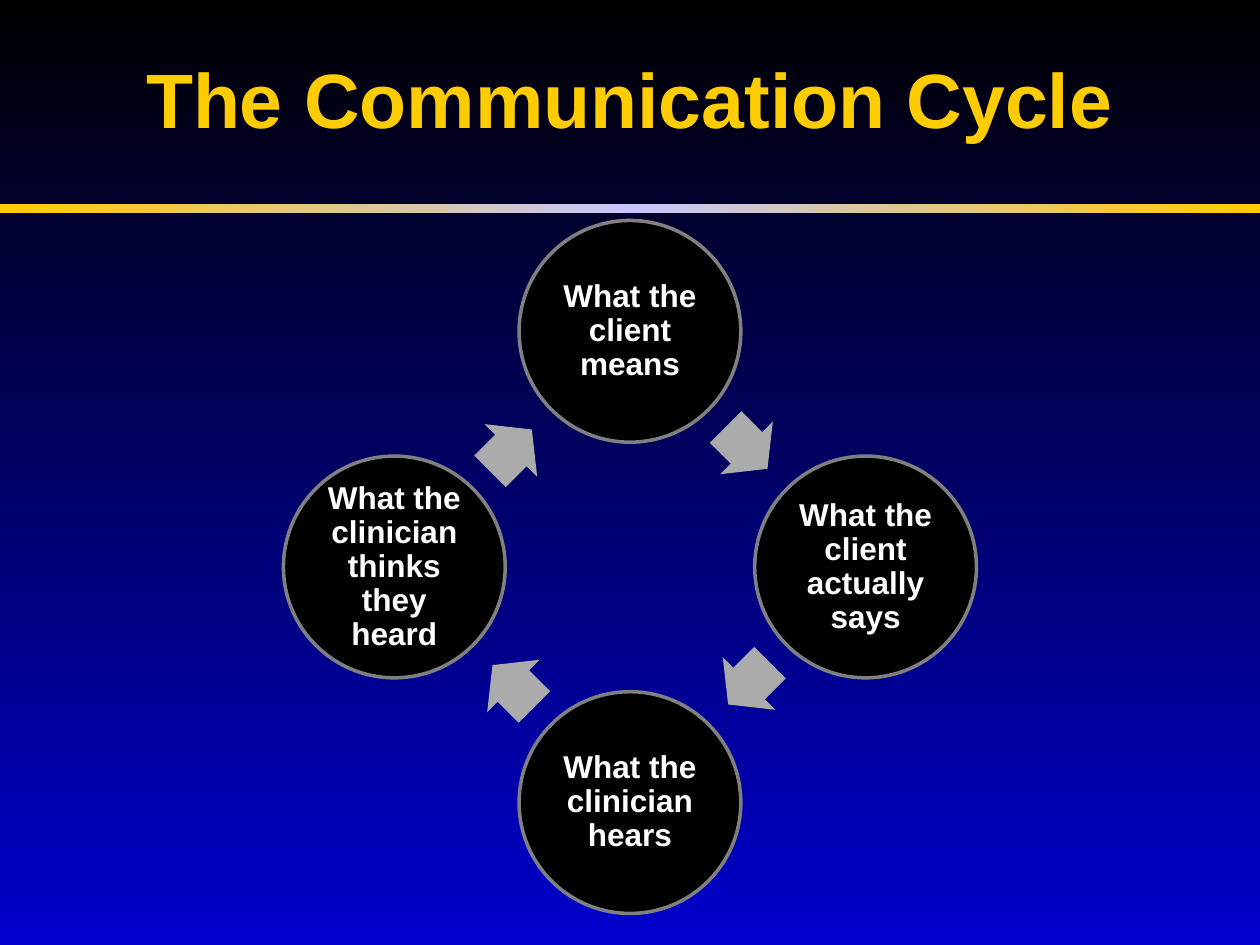
from copy import deepcopy
from dataclasses import dataclass

from pptx import Presentation
from pptx.dml.color import RGBColor
from pptx.enum.shapes import MSO_SHAPE as Preset
from pptx.enum.text import MSO_ANCHOR as Anchor, PP_ALIGN as Align
from pptx.oxml.ns import qn
from pptx.util import Inches, Pt

GOLD, WHITE, BLACK = "FFCC00", "FFFFFF", "000000"
CENTER_X, CENTER_Y = 5, 4.5
ORBIT = 1.87
DIAMETER = 1.76
ARROW_WIDTH, ARROW_HEIGHT = 0.47, 0.59


@dataclass(frozen=True)
class Offset:
    x: float
    y: float

    def turned(self, quarters: int) -> "Offset":
        return Offset(-self.y, self.x).turned(quarters - 1) if quarters else self


STAGE_OFFSET = Offset(0, -ORBIT)
ARROW_OFFSET = Offset(0.925, -0.945)
STAGES = [
    "What the client means",
    "What the client actually says",
    "What the clinician hears",
    "What the clinician thinks they heard",
]


def rgb(color: str) -> RGBColor:
    return RGBColor.from_string(color)


def set_gradient(fill, element, colors: list[str], angle: float) -> None:
    fill.gradient()
    fill.gradient_angle = angle
    stop_list = element.find(".//" + qn("a:gsLst"))
    while len(stop_list) < len(colors):
        stop_list.append(deepcopy(stop_list[-1]))
    for index, (stop, color) in enumerate(zip(fill.gradient_stops, colors)):
        stop.color.rgb = rgb(color)
        stop.position = index / (len(colors) - 1)


def add_text(shape, text: str, size: float, color: str, line_spacing: float = 1.0) -> None:
    frame = shape.text_frame
    frame.word_wrap = True
    frame.vertical_anchor = Anchor.MIDDLE
    paragraph = frame.paragraphs[0]
    paragraph.alignment = Align.CENTER
    paragraph.line_spacing = line_spacing
    run = paragraph.add_run()
    run.text = text
    run.font.name = "Arial"
    run.font.size = Pt(size)
    run.font.bold = True
    run.font.color.rgb = rgb(color)


def add_centered(slide, preset, offset: Offset, width: float, height: float, color: str):
    shape = slide.shapes.add_shape(
        preset,
        Inches(CENTER_X + offset.x - width / 2),
        Inches(CENTER_Y + offset.y - height / 2),
        Inches(width),
        Inches(height),
    )
    shape.shadow.inherit = False
    shape.fill.solid()
    shape.fill.fore_color.rgb = rgb(color)
    return shape


def add_stage(slide, text: str, offset: Offset) -> None:
    circle = add_centered(slide, Preset.OVAL, offset, DIAMETER, DIAMETER, BLACK)
    circle.line.color.rgb = rgb("808080")
    circle.line.width = Pt(2)
    frame = circle.text_frame
    frame.margin_left = frame.margin_right = Inches(0.03)
    frame.margin_top = frame.margin_bottom = Inches(0.03)
    add_text(circle, text, 18, WHITE, 0.9)


def add_arrow(slide, offset: Offset, rotation: float) -> None:
    arrow = add_centered(
        slide, Preset.RIGHT_ARROW, offset, ARROW_WIDTH, ARROW_HEIGHT, "ABABAB"
    )
    arrow.adjustments[0] = 0.6
    arrow.adjustments[1] = 0.5
    arrow.line.fill.background()
    arrow.rotation = rotation


def add_divider(slide) -> None:
    divider = slide.shapes.add_shape(
        Preset.RECTANGLE, Inches(0), Inches(1.62), Inches(10), Inches(0.07)
    )
    divider.shadow.inherit = False
    divider.line.fill.background()
    set_gradient(divider.fill, divider._element, [GOLD, "C5C5FF", GOLD], 0)


def main() -> None:
    presentation = Presentation()
    presentation.slide_width = Inches(10)
    presentation.slide_height = Inches(7.5)
    slide = presentation.slides.add_slide(presentation.slide_layouts[6])
    set_gradient(slide.background.fill, slide._element, [BLACK, "0000CC"], 270)
    add_divider(slide)
    title = slide.shapes.add_textbox(Inches(0.25), Inches(0), Inches(9.5), Inches(1.55))
    add_text(title, "The Communication Cycle", 44, GOLD)
    for index, text in enumerate(STAGES):
        add_stage(slide, text, STAGE_OFFSET.turned(index))
        add_arrow(slide, ARROW_OFFSET.turned(index), 45 + 90 * index)
    presentation.save("out.pptx")


if __name__ == "__main__":
    main()
